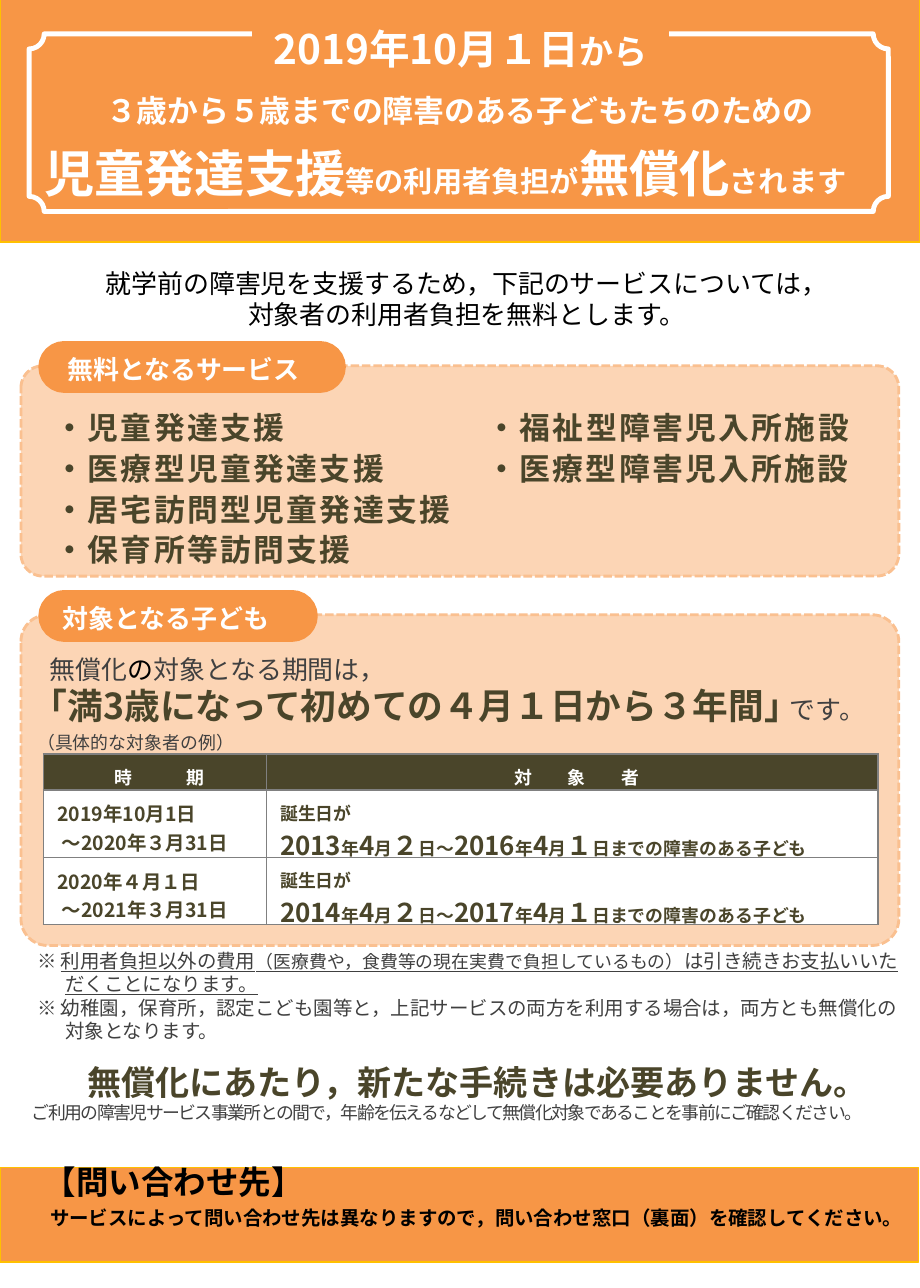
"""Build the one-page notice on free support for children."""
import pptx
import pptx.util
import pptx.dml.color
import pptx.enum.dml
import pptx.enum.shapes
import pptx.enum.text
import pptx.oxml.ns
from lxml import etree

RGB = pptx.dml.color.RGBColor
KIND = pptx.enum.shapes.MSO_SHAPE
ALIGN = pptx.enum.text.PP_ALIGN
MIDDLE = pptx.enum.text.MSO_ANCHOR.MIDDLE
Pt = pptx.util.Pt
WIDE, HIGH = Pt(567), Pt(793.75)
FONT = "Noto Sans CJK JP"
ORANGE = RGB(0xF7, 0x96, 0x46)
GOLD = RGB(0xFF, 0xC0, 0x00)
PEACH = RGB(0xFC, 0xD5, 0xB5)
DASH = RGB(0xFA, 0xC0, 0x90)
OLIVE = RGB(0x4A, 0x45, 0x2A)
DARK = RGB(0x40, 0x40, 0x40)
GREY = RGB(0x80, 0x80, 0x80)
BLACK = RGB(0, 0, 0)
WHITE = RGB(0xFF, 0xFF, 0xFF)
INSET = (0.1, 0.05, 0.1, 0.05)


def across(share):
    """Turn a percentage of the slide's width into a length."""
    return round(WIDE * share / 100)


def down(share):
    """Turn a percentage of the slide's height into a length."""
    return round(HIGH * share / 100)


def place(box):
    """Turn left, top, width and height percentages into lengths."""
    left, top, wide, high = box
    return across(left), down(top), across(wide), down(high)


def add_tag(node, name, **attrs):
    """Append a drawing element and return it."""
    return etree.SubElement(node, pptx.oxml.ns.qn("a:" + name), **attrs)


def add_run(para, text, size, color, bold=False, under=False, gap=0):
    """Add one styled run to a paragraph."""
    run = para.add_run()
    run.text = text
    font = run.font
    font.size, font.bold = Pt(size), bold
    font.underline = under or None
    font.color.rgb = color
    font.name = FONT
    props = run._r.get_or_add_rPr()
    props.set("lang", "ja-JP")
    if gap:
        props.set("spc", str(round(gap * 100)))
    add_tag(props, "ea", typeface=FONT)


def add_para(frame, runs, align=ALIGN.LEFT, left=0, first=0,
             before=0, after=0, line=None):
    """Fill the empty first paragraph or add a new one."""
    para = frame.paragraphs[0]
    if para.runs:
        para = frame.add_paragraph()
    para.alignment = align
    para.space_before, para.space_after = Pt(before), Pt(after)
    if line:
        para.line_spacing = line
    props = para._p.get_or_add_pPr()
    props.set("marL", str(across(left)))
    props.set("indent", str(across(first)))
    for run in runs:
        add_run(para, *run)
    return para


def set_inset(target, inset=INSET):
    """Set the four inner margins of a frame or a cell."""
    left, top, right, low = map(pptx.util.Inches, inset)
    target.margin_left, target.margin_top = left, top
    target.margin_right, target.margin_bottom = right, low


def set_frame(frame, inset=INSET, anchor=None):
    """Set wrapping, insets and anchor of a text frame."""
    frame.word_wrap = True
    set_inset(frame, inset)
    if anchor is not None:
        frame.vertical_anchor = anchor
    return frame


def add_text(slide, box, anchor=None):
    """Add a text box and return its frame."""
    return set_frame(slide.shapes.add_textbox(*place(box)).text_frame, anchor=anchor)


def add_form(slide, kind, box, fill=None, line=None, width=1, curve=None):
    """Add a preset shape with plain fill and line."""
    shape = slide.shapes.add_shape(kind, *place(box))
    shape.shadow.inherit = False
    if curve:
        shape.adjustments[0] = curve
    if fill is None:
        shape.fill.background()
    else:
        shape.fill.solid()
        shape.fill.fore_color.rgb = fill
    if line is None:
        shape.line.fill.background()
    else:
        shape.line.color.rgb = line
        shape.line.width = Pt(width)
    return shape


def add_card(slide, top, high, curve, title, wide, shift):
    """Add a dashed card with a titled tab on its top edge."""
    card = add_form(slide, KIND.ROUNDED_RECTANGLE, (2.28, top, 95.43, high),
                    PEACH, DASH, 1.75, curve)
    card.line.dash_style = pptx.enum.dml.MSO_LINE.SQUARE_DOT
    add_form(slide, KIND.ROUNDED_RECTANGLE, (4.7, top - 1.54, wide, 3.27),
             ORANGE, ORANGE, 6, 0.5)
    label = add_text(slide, (shift, top - 1.36, wide + 2, 3.45))
    add_para(label, [(title, 16, WHITE, True)])


def set_cell(cell, fill):
    """Set fill, insets and borders of a cell and return its frame."""
    cell.vertical_anchor = MIDDLE
    set_inset(cell, (0.12, 0.08, 0.04, 0.04))
    props = cell._tc.get_or_add_tcPr()
    for side in ("lnL", "lnR", "lnT", "lnB"):
        edge = add_tag(props, side, w=str(Pt(1)))
        add_tag(add_tag(edge, "solidFill"), "srgbClr", val=str(GREY))
    cell.fill.solid()
    cell.fill.fore_color.rgb = fill
    return cell.text_frame


def add_ages(slide):
    """Add the table of periods and birth dates."""
    grid = slide.shapes.add_table(3, 2, *place((4.7, 58.53, 90.74, 13.25))).table
    for col, wide in zip(grid.columns, (24.24, 66.5)):
        col.width = across(wide)
    for row, high in zip(grid.rows, (2.81, 5.22, 5.22)):
        row.height = down(high)
    for col, (word, gap) in enumerate((("時　期", 22), ("対　象　者", 11))):
        add_para(set_cell(grid.cell(0, col), OLIVE),
                 [(sign, 11, WHITE, True, False, gap if sign == "　" else 0)
                  for sign in word], ALIGN.CENTER)
    spans = (("2019年10月1日", " ～2020年３月31日", "2013", "2016"),
             ("2020年４月１日", " ～2021年３月31日", "2014", "2017"))
    for row, (start, end, old, young) in enumerate(spans, 1):
        para = add_para(set_cell(grid.cell(row, 0), WHITE), [(start, 12, OLIVE, True)])
        para.add_line_break()
        add_run(para, end, 12, OLIVE, True)
        birth = set_cell(grid.cell(row, 1), WHITE)
        add_para(birth, [("誕生日が", 11, OLIVE, True)])
        words = (old, "年", "4", "月", "２", "日～", young, "年", "4", "月", "１",
                 "日までの障害のある子ども")
        add_para(birth, [(word, 11 if spot % 2 else 16, OLIVE, True)
                         for spot, word in enumerate(words)])


def add_head(slide):
    """Add the orange heading with its framed title."""
    add_form(slide, KIND.RECTANGLE, (0, -0.27, 100, 19.06), ORANGE, GOLD)
    add_form(slide, KIND.PLAQUE, (3.17, 2.63, 93.4, 13.79), None, WHITE, 3, 0.085)
    title = add_text(slide, (2.28, 6.72, 95.43, 9.44), MIDDLE)
    lines = ([("３歳から５歳までの障害のある子どもたちのための", 19)],
             [("児童発達支援", 31), ("等の利用者負担が", 18), ("無償化", 31),
              ("されます　", 18)])
    for line in lines:
        add_para(title, [(word, size, WHITE, True) for word, size in line],
                 ALIGN.CENTER, 1.14, -1.14, after=8.2)
    date = add_form(slide, KIND.RECTANGLE, (27.41, 0.91, 45.3, 4.63), ORANGE)
    frame = set_frame(date.text_frame, (0.04, 0.12, 0.04, 0), MIDDLE)
    add_para(frame, [("2019年10月１日", 25, WHITE, True), ("から", 21, WHITE, True)],
             ALIGN.CENTER, 1.14, -1.14, after=6.2)


def add_notes(slide):
    """Add the remarks and the closing message."""
    frame = add_text(slide, (0.13, 73.23, 99.87, 14.79))
    add_para(frame, [
        ("※ ", 12, DARK), ("利用者負担以外の費用", 12, DARK, False, True),
        ("（医療費や，食費等の現在実費で負担しているもの）", 11, DARK, False, True),
        ("は引き続きお支払いいただくことになります。", 12, DARK, False, True)],
        left=5.71, first=-3.05)
    add_para(frame, [("※ 幼稚園，保育所，認定こども園等と，上記サービスの両方を利用する場合は，"
                      "両方とも無償化の対象となります。", 12, DARK)], left=5.71, first=-3.05)
    add_para(frame, [("無償化にあたり，新たな手続きは必要ありません。", 21, OLIVE, True)],
             ALIGN.CENTER, 3.7, before=11.5)
    add_para(frame, [("ご利用の障害児サービス事業所との間で，年齢を伝えるなどして"
                      "無償化対象であることを事前にご確認ください。",
                      11, DARK, False, False, -1)], left=2.1)


def add_foot(slide):
    """Add the orange band that says where to ask."""
    band = add_form(slide, KIND.RECTANGLE, (0, 90.65, 99.87, 7.35), ORANGE, GOLD)
    frame = set_frame(band.text_frame, (0.1, 0.05, 0.1, 0.2), MIDDLE)
    lines = (("【問い合わせ先】", 20, 3.53),
             ("サービスによって問い合わせ先は異なりますので，"
              "問い合わせ窓口（裏面）を確認してください。", 12, 4.2))
    for text, size, left in lines:
        add_para(frame, [(text, size, BLACK, True)], ALIGN.JUSTIFY, left,
                 after=6.2, line=Pt(11))


def add_free(slide):
    """Add the list of free services."""
    frame = add_text(slide, (4.7, 31.03, 92.13, 13.61))
    pairs = (("・児童発達支援", 104, "・福祉型障害児入所施設"),
             ("・医療型児童発達支援", 42.5, "・医療型障害児入所施設"),
             ("・居宅訪問型児童発達支援", 0, ""), ("・保育所等訪問支援", 0, ""))
    for name, gap, other in pairs:
        parts = [(name, 1.5)] + ([("　", gap), (other, 1.5)] if other else [])
        add_para(frame, [(text, 19, OLIVE, True, False, space)
                         for text, space in parts], line=1.1)


def main():
    """Build and save the slide."""
    deck = pptx.Presentation()
    deck.slide_width, deck.slide_height = WIDE, HIGH
    slide = deck.slides.add_slide(deck.slide_layouts[6])
    add_card(slide, 47.73, 25.68, 0.081, "対象となる子ども", 29.31, 5.58)
    term = add_text(slide, (4.19, 50.27, 95.81, 6.72))
    add_para(term, [("無償化", 16, DARK), ("の", 16, BLACK),
                    ("対象となる期間は，", 16, DARK)], left=2.54, first=-2.54)
    add_para(term, [("｢満3歳になって初めての４月１日から３年間｣ ", 22, OLIVE, True),
                    ("です。", 16, DARK)], left=2.54, first=-2.54)
    add_foot(slide)
    add_ages(slide)
    intro = add_text(slide, (1.9, 20.33, 97.72, 5.9))
    for text in ("就学前の障害児を支援するため，下記のサービスについては，",
                 "対象者の利用者負担を無料とします。"):
        add_para(intro, [(text, 16, BLACK)], ALIGN.CENTER, 2.54, -2.54)
    case = add_text(slide, (2.79, 56.35, 36.93, 2.63))
    add_para(case, [("（具体的な対象者の例）", 11, DARK)], left=2.54, first=-2.54)
    add_notes(slide)
    add_card(slide, 28.4, 16.33, 0.105, "無料となるサービス", 32.36, 6.09)
    add_free(slide)
    add_head(slide)
    deck.save("out.pptx")


if __name__ == "__main__":
    main()
